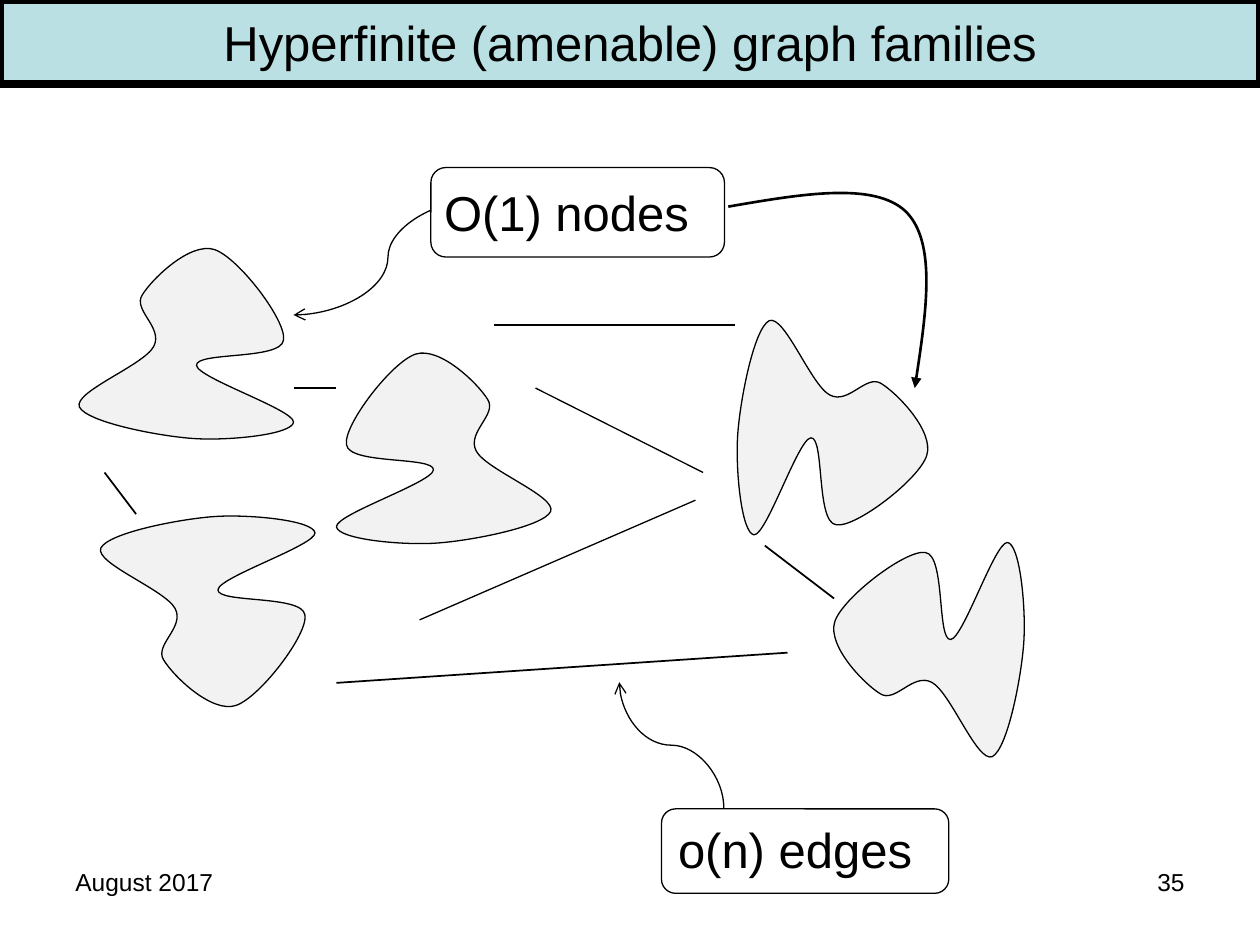
from pptx import Presentation
from pptx.dml.color import RGBColor
from pptx.enum.shapes import MSO_CONNECTOR, MSO_SHAPE
from pptx.enum.text import MSO_ANCHOR, PP_ALIGN
from pptx.oxml.ns import qn
from pptx.oxml.xmlchemy import OxmlElement
from pptx.util import Inches, Pt

BLACK = RGBColor(0, 0, 0)
WHITE = RGBColor(255, 255, 255)
GREY = RGBColor(0xF2, 0xF2, 0xF2)
TEAL = RGBColor(0xBB, 0xE0, 0xE3)
FONT = "Arial"

TITLE = "Hyperfinite (amenable) graph families"
NOTES = [  # text, left, top, width, align
    ("August 2017", 0.5, 6.83, 2.33, PP_ALIGN.LEFT),
    ("35", 7.17, 6.83, 2.33, PP_ALIGN.RIGHT),
]
LABELS = [  # text, box, left inset, anchor, fill
    ("o(n) edges", (5.25, 6.42, 2.28, 0.67), 0.1, MSO_ANCHOR.TOP, None),
    ("O(1) nodes", (3.42, 1.33, 2.33, 0.71), 0.07, MSO_ANCHOR.MIDDLE, WHITE),
]
EDGES = [  # start, end, line width
    ((3.92, 2.58), (5.83, 2.58), 0.75),
    ((4.25, 3.08), (5.58, 3.75), 0.75),
    ((3.33, 4.92), (5.52, 3.97), 0.75),
    ((0.83, 3.75), (1.08, 4.08), 1),
    ((6.07, 4.33), (6.62, 4.75), 1),
    ((2.33, 3.08), (2.67, 3.08), 1),
    ((2.67, 5.42), (6.25, 5.18), 1),
]
CURVES = [  # start, end before turning, turn in degrees
    ((4.83, 6.33), (5.83, 5.5), 270),
    ((3.83, 1.58), (2.33, 2.5), 0),
]
SWEEP = [(5.78, 1.64), (6.36, 1.54), (6.94, 1.44), (7.19, 1.68),
         (7.43, 1.92), (7.35, 2.5), (7.26, 3.08)]

# One part of the graph: start point, then three points per Bezier curve
BLOB_W, BLOB_H = 1.75, 1.58
BLOB = [
    (0.55, 0.42),
    (0.63, 0.29), (0.93, 0), (1.12, 0.06),
    (1.31, 0.12), (1.7, 0.63), (1.67, 0.78),
    (1.65, 0.94), (0.97, 0.87), (0.98, 0.98),
    (0.99, 1.08), (1.75, 1.33), (1.75, 1.43),
    (1.74, 1.53), (1.23, 1.58), (0.95, 1.56),
    (0.67, 1.54), (0.11, 1.43), (0.05, 1.31),
    (0, 1.19), (0.56, 0.98), (0.64, 0.83),
    (0.72, 0.68), (0.47, 0.54), (0.55, 0.42),
]
PARTS = [  # left, top, flip across, flip down, turn in degrees
    (0.58, 1.92, False, False, 0),
    (0.75, 4.08, False, True, 0),
    (2.67, 2.75, True, False, 0),
    (5.75, 2.58, False, False, 90),
    (6.48, 4.39, False, False, 270),
]


def ink(shape, width):
    shape.line.color.rgb = BLACK
    shape.line.width = Pt(width)


def paint(shape, color):
    if color is None:
        shape.fill.background()
    else:
        shape.fill.solid()
        shape.fill.fore_color.rgb = color


def write(shape, text, size, align):
    frame = shape.text_frame
    frame.text = text
    frame.word_wrap = True
    para = frame.paragraphs[0]
    para.alignment = align
    font = para.runs[0].font
    font.name, font.size, font.color.rgb = FONT, Pt(size), BLACK


def add_head(shape, kind):
    tail = OxmlElement("a:tailEnd")
    tail.set("type", kind)
    shape.line._get_or_add_ln().append(tail)


def add_line(slide, kind, start, end, width):
    ends = [Inches(v) for v in start + end]
    line = slide.shapes.add_connector(kind, *ends)
    ink(line, width)
    line._element.spPr.append(OxmlElement("a:effectLst"))
    return line


def add_bezier(slide, points, close, color, width):
    """Draw a freeform whose points after the first form cubic curves."""
    spots = [(Inches(x), Inches(y)) for x, y in points]
    pen = slide.shapes.build_freeform(*spots[0])
    pen.add_line_segments(spots[1:], close=close)
    shape = pen.convert_to_shape()
    steps = list(shape._element.iter(qn("a:lnTo")))
    for i in range(0, len(steps), 3):
        first, *rest = steps[i:i + 3]
        first.tag = qn("a:cubicBezTo")
        for step in rest:
            first.append(step[0])
            step.getparent().remove(step)
    shape.shadow.inherit = False
    paint(shape, color)
    ink(shape, width)
    return shape


def add_part(slide, left, top, across, down, turn):
    points = [(left + (BLOB_W - x if across else x),
               top + (BLOB_H - y if down else y)) for x, y in BLOB]
    add_bezier(slide, points, True, GREY, 0.75).rotation = turn


def add_label(slide, text, box, inset, anchor, color):
    shape = slide.shapes.add_shape(MSO_SHAPE.ROUNDED_RECTANGLE,
                                   *[Inches(v) for v in box])
    shape.shadow.inherit = False
    paint(shape, color)
    ink(shape, 0.75)
    write(shape, text, 28, PP_ALIGN.LEFT)
    shape.text_frame.margin_left = Inches(inset)
    shape.text_frame.vertical_anchor = anchor


def main():
    deck = Presentation()
    deck.slide_width, deck.slide_height = Inches(10), Inches(7.5)
    slide = deck.slides.add_slide(deck.slide_layouts[5])

    title = slide.shapes.title
    title.left, title.top = Inches(0), Inches(0)
    title.width, title.height = Inches(10), Inches(0.67)
    paint(title, TEAL)
    ink(title, 4.5)
    write(title, TITLE, 28, PP_ALIGN.CENTER)
    title.text_frame.vertical_anchor = MSO_ANCHOR.MIDDLE

    for text, left, top, width, align in NOTES:
        note = slide.shapes.add_textbox(Inches(left), Inches(top),
                                        Inches(width), Inches(0.52))
        write(note, text, 14, align)

    for part in PARTS:
        add_part(slide, *part)
    for start, end, width in EDGES:
        add_line(slide, MSO_CONNECTOR.STRAIGHT, start, end, width)
    for start, end, turn in CURVES:
        curve = add_line(slide, MSO_CONNECTOR.CURVE, start, end, 0.75)
        curve._element.spPr.xfrm.set("rot", str(turn * 60000))
        add_head(curve, "arrow")
    for label in LABELS:
        add_label(slide, *label)
    add_head(add_bezier(slide, SWEEP, False, None, 1.5), "triangle")

    deck.save("out.pptx")


if __name__ == "__main__":
    main()
